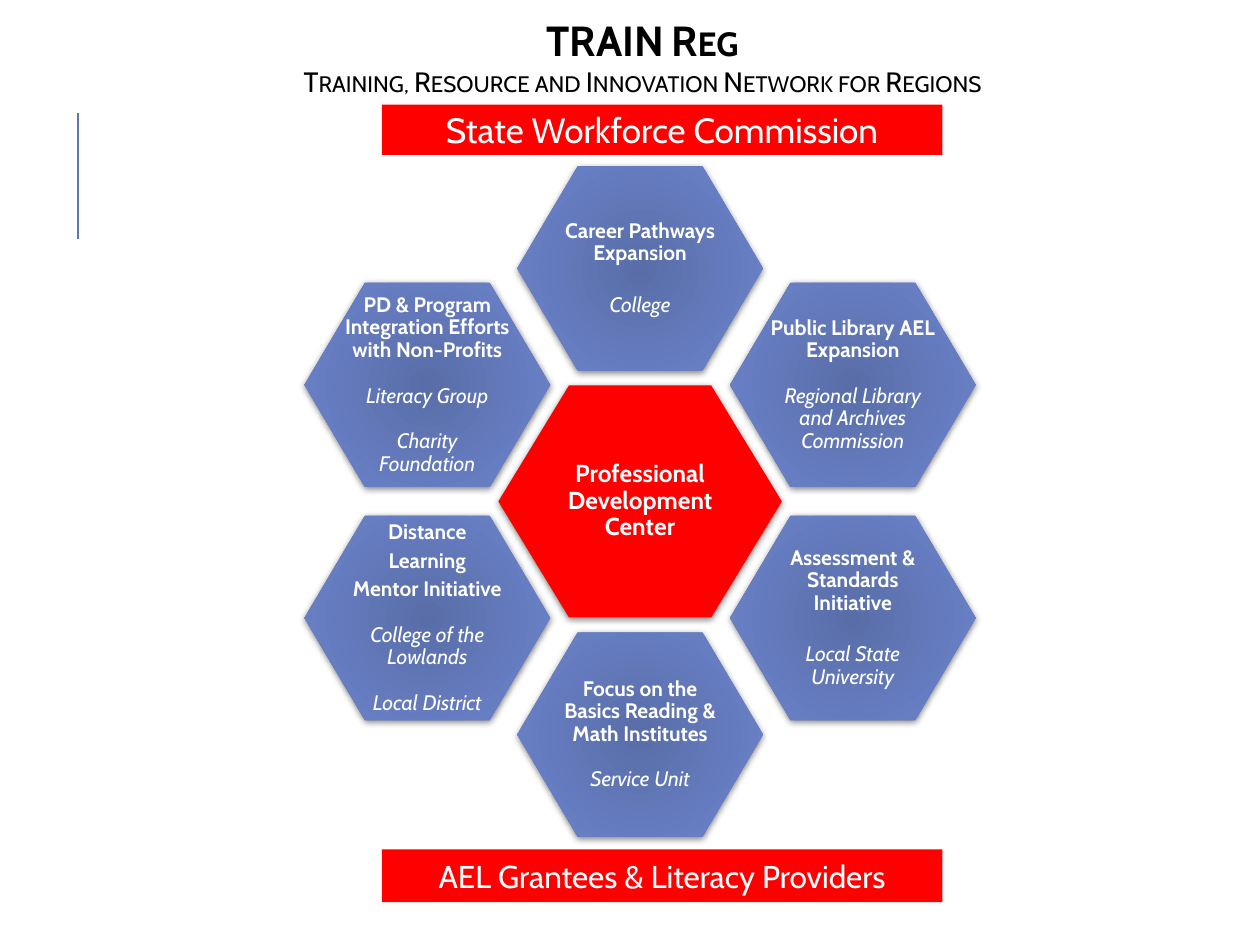
"""Build the training network slide: two banners and a ring of hexagons."""
from dataclasses import dataclass
from math import cos, radians, sin

from lxml import etree
from pptx import Presentation
from pptx import util as u
from pptx.dml import color
from pptx.enum import shapes, text
from pptx.oxml import ns

RED, WHITE, BLACK, BLUE = "FF0000", "FFFFFF", "000000", "6076B4"
DARK, LIGHT = "596EA8", "6D84CD"
GAP, WIDE, THIN = 13, 16.4, 3.4
MID = (5.08, 3.98)
BOLD, SLANT = {"bold": True}, {"italic": True}


@dataclass
class Para:
    """One paragraph with its style and the space before it in points."""
    words: str
    style: dict
    gap: float = 0
    size: float = 12


@dataclass
class Hexa:
    """A hexagon by centre, size, corner inset and text margins."""
    x: float
    y: float
    paras: list
    w: float = 1.95
    h: float = 1.62
    cut: float = 0.48
    pad: tuple = (0.3, 0.26)


@dataclass
class Banner:
    """A red bar with one line of text."""
    top: float
    high: float
    words: str
    size: float


RING = [
    [Para("Career Pathways Expansion", BOLD), Para("College", SLANT, WIDE)],
    [Para("Public Library AEL Expansion", BOLD),
     Para("Regional Library and Archives Commission", SLANT, GAP)],
    [Para("Assessment & Standards Initiative", BOLD),
     Para("Local State University", SLANT, WIDE)],
    [Para("Focus on the Basics Reading & Math Institutes", BOLD),
     Para("Service Unit", SLANT, GAP)],
    [Para("Distance", BOLD), Para("Learning", BOLD, THIN),
     Para("Mentor Initiative", BOLD, THIN),
     Para("College of the Lowlands", SLANT, GAP),
     Para("Local District", SLANT, GAP)],
    [Para("PD & Program Integration Efforts\vwith Non-Profits", BOLD),
     Para("Literacy Group", SLANT, GAP),
     Para("Charity\vFoundation", SLANT, GAP)],
]
CORE = Hexa(*MID, [Para("Professional Development Center", BOLD, size=14)],
            2.25, 1.84, 0.56, (0.37, 0.32))
BARS = [Banner(6.74, 0.42, "AEL Grantees & Literacy Providers", 18),
        Banner(0.83, 0.4, "State Workforce Commission", 20)]
HEAD = [Para("TRAIN Reg", BOLD, size=24),
        Para("Training, Resource and Innovation Network for Regions",
             {"bold": False}, size=16)]


def rgb(code: str) -> color.RGBColor:
    """Turn a hex string into a colour."""
    return color.RGBColor.from_string(code)


def apply(item, vals: dict) -> None:
    """Set each attribute of an item from a dict."""
    for key, val in vals.items():
        setattr(item, key, val)


def paint(shape, code: str) -> None:
    """Give a shape a plain fill."""
    shape.fill.solid()
    shape.fill.fore_color.rgb = rgb(code)


def write(frame, paras: list, ink: str, lead: float = 1.0, pad: tuple = (0.1, 0.05)) -> None:
    """Fill a text frame with centred paragraphs."""
    side, edge = map(u.Inches, pad)
    apply(frame, {"word_wrap": True, "auto_size": text.MSO_AUTO_SIZE.NONE,
                  "vertical_anchor": text.MSO_ANCHOR.MIDDLE,
                  "margin_left": side, "margin_right": side,
                  "margin_top": edge, "margin_bottom": edge})
    for num, para in enumerate(paras):
        line = frame.add_paragraph() if num else frame.paragraphs[0]
        line.text = para.words
        apply(line, {"alignment": text.PP_ALIGN.CENTER, "line_spacing": lead,
                     "space_before": u.Pt(para.gap), "space_after": u.Pt(0)})
        for run in line.runs:
            apply(run.font, {"name": "Cabin", "size": u.Pt(para.size), **para.style})
            run.font.color.rgb = rgb(ink)


def glow(shape) -> None:
    """Fill a shape with a round gradient, dark in the middle."""
    shape.fill.gradient()
    for stop, code in zip(shape.fill.gradient_stops, (DARK, LIGHT)):
        stop.color.rgb = rgb(code)
    grad = shape._element.spPr.find(ns.qn("a:gradFill"))
    grad.remove(grad.find(ns.qn("a:lin")))
    way = etree.SubElement(grad, ns.qn("a:path"), {"path": "circle"})
    etree.SubElement(way, ns.qn("a:fillToRect"), dict.fromkeys("ltrb", "100000"))


def shade(shape) -> None:
    """Add a soft shadow just below a shape."""
    shape.shadow.inherit = False
    list_ = shape._element.spPr.find(ns.qn("a:effectLst"))
    cast = etree.SubElement(list_, ns.qn("a:outerShdw"), {
        "blurRad": str(u.Pt(4)), "dist": str(u.Pt(1)), "dir": "5400000",
        "rotWithShape": "0"})
    tint = etree.SubElement(cast, ns.qn("a:srgbClr"), {"val": BLACK})
    etree.SubElement(tint, ns.qn("a:alpha"), {"val": "50000"})


def draw_hexa(slide, hexa: Hexa, code: str = "") -> None:
    """Draw a hexagon, plain if a colour is given and else with a gradient."""
    far, near, high = hexa.w / 2, hexa.w / 2 - hexa.cut, hexa.h / 2
    spots = [(-far, 0), (-near, -high), (near, -high),
             (far, 0), (near, high), (-near, high)]
    spots = [(u.Inches(hexa.x + x), u.Inches(hexa.y + y)) for x, y in spots]
    pen = slide.shapes.build_freeform(*spots[0])
    pen.add_line_segments(spots[1:], close=True)
    shape = pen.convert_to_shape()
    if code:
        paint(shape, code)
    else:
        glow(shape)
    shape.line.fill.background()
    shade(shape)
    write(shape.text_frame, hexa.paras, WHITE, 0.9, hexa.pad)


def draw_bar(slide, bar: Banner) -> None:
    """Draw a red banner."""
    shape = slide.shapes.add_shape(
        shapes.MSO_SHAPE.RECTANGLE, *map(u.Inches, (3.03, bar.top, 4.45, bar.high)))
    paint(shape, RED)
    shape.line.fill.background()
    shape.shadow.inherit = False
    write(shape.text_frame, [Para(bar.words, {}, size=bar.size)], WHITE)


def draw_rule(slide) -> None:
    """Draw the thin upright line at the left."""
    rule = slide.shapes.add_connector(
        shapes.MSO_CONNECTOR.STRAIGHT, *map(u.Inches, (0.62, 1.9, 0.62, 0.9)))
    rule.line.color.rgb = rgb(BLUE)
    rule.line.width = u.Pt(1.5)
    etree.SubElement(rule._element.spPr, ns.qn("a:effectLst"))


def draw_title(slide) -> None:
    """Place the title in small capitals."""
    title = slide.shapes.title
    apply(title, {"left": u.Inches(1.87), "top": u.Inches(0.05),
                  "width": u.Inches(6.46), "height": u.Inches(0.79)})
    paint(title, WHITE)
    write(title.text_frame, HEAD, BLACK)
    for line in title.text_frame.paragraphs:
        for run in line.runs:
            run._r.get_or_add_rPr().set("cap", "small")


def main() -> None:
    """Build and save the slide."""
    deck = Presentation()
    apply(deck, {"slide_width": u.Inches(10), "slide_height": u.Inches(7.5)})
    slide = deck.slides.add_slide(deck.slide_layouts[5])
    draw_rule(slide)
    draw_hexa(slide, CORE, RED)
    for num, paras in enumerate(RING):
        turn = radians(60 * num)
        draw_hexa(slide, Hexa(MID[0] + 1.95 * sin(turn), MID[1] - 1.85 * cos(turn), paras))
    for bar in BARS:
        draw_bar(slide, bar)
    draw_title(slide)
    deck.save("out.pptx")


if __name__ == "__main__":
    main()
